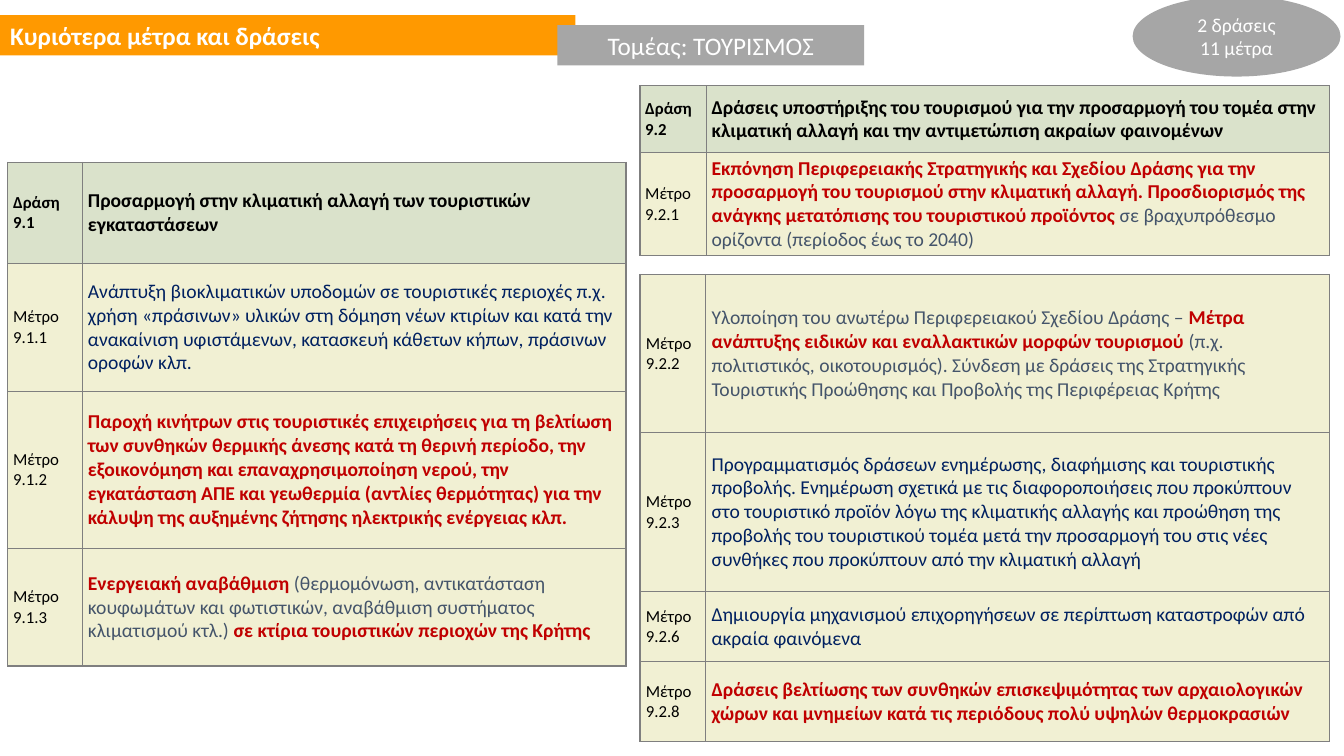
from lxml.etree import fromstring
from pptx import Presentation
from pptx.dml.color import RGBColor
from pptx.enum.shapes import MSO_SHAPE
from pptx.enum.text import MSO_ANCHOR, MSO_AUTO_SIZE, PP_ALIGN
from pptx.util import Pt

GREEN, CREAM, GREY, WHITE = "DAE2CB", "F1F0D3", "A6A6A6", "FFFFFF"
BLACK, RED, NAVY, SLATE = "000000", "C00000", "002060", "44546A"
EDGE = "7F7F7F"
NS = "http://schemas.openxmlformats.org/drawingml/2006/main"


def paint(fill, tone):
    fill.solid()
    fill.fore_color.rgb = RGBColor.from_string(tone)


def write(para, text, size=14, tone=BLACK, bold=False, align=PP_ALIGN.LEFT):
    para.alignment = align
    run = para.add_run()
    run.text = text
    run.font.name = "Calibri"
    run.font.size = Pt(size)
    run.font.bold = bold
    paint(run.font.fill, tone)


deck = Presentation()
deck.slide_width, deck.slide_height = Pt(960), Pt(540)
slide = deck.slides.add_slide(deck.slide_layouts[5])

# Header band
title = slide.shapes.title
title.left, title.top, title.width, title.height = Pt(0), Pt(10.8), Pt(411), Pt(28.8)
paint(title.fill, "FF9900")
title.text_frame.auto_size = MSO_AUTO_SIZE.NONE
title.text_frame.vertical_anchor = MSO_ANCHOR.MIDDLE
write(title.text_frame.paragraphs[0], "Κυριότερα μέτρα και δράσεις",
      size=18, tone=WHITE, bold=True)

badges = [
    (MSO_SHAPE.RECTANGLE, (398.2, 18, 219, 28.8), 18, ["Τομέας: ΤΟΥΡΙΣΜΟΣ"]),
    (MSO_SHAPE.OVAL, (809, -2.9, 148.5, 57.6), 14, ["2 δράσεις", "11 μέτρα"]),
]
for kind, box, size, lines in badges:
    badge = slide.shapes.add_shape(kind, *map(Pt, box))
    badge.shadow.inherit = False
    paint(badge.fill, GREY)
    badge.line.fill.background()
    frame = badge.text_frame
    frame.word_wrap = True
    frame.vertical_anchor = MSO_ANCHOR.MIDDLE
    for i, line in enumerate(lines):
        para = frame.add_paragraph() if i else frame.paragraphs[0]
        write(para, line, size=size, tone=WHITE, align=PP_ALIGN.CENTER)

# Each grid: left, top, column widths, side inset, rows of (height, label, runs)
grids = [
    (5.6, 116.1, (53.4, 388.2), 3.8, [
        (72, "Δράση 9.1", [
            (BLACK, "Προσαρμογή στην κλιματική αλλαγή των τουριστικών εγκαταστάσεων")]),
        (91.5, "Μέτρο 9.1.1", [
            (NAVY, "Ανάπτυξη βιοκλιματικών υποδομών σε τουριστικές περιοχές π.χ. "
                   "χρήση «πράσινων» υλικών στη δόμηση νέων κτιρίων και κατά την "
                   "ανακαίνιση υφιστάμενων, κατασκευή κάθετων κήπων, πράσινων "
                   "οροφών κλπ.")]),
        (112.2, "Μέτρο 9.1.2", [
            (RED, "Παροχή κινήτρων στις τουριστικές επιχειρήσεις για τη βελτίωση "
                  "των συνθηκών θερμικής άνεσης κατά τη θερινή περίοδο, την "
                  "εξοικονόμηση και επαναχρησιμοποίηση νερού, την "
                  "εγκατάσταση ΑΠΕ και γεωθερμία (αντλίες θερμότητας) για την "
                  "κάλυψη της αυξημένης ζήτησης ηλεκτρικής ενέργειας κλπ.")]),
        (84, "Μέτρο 9.1.3", [
            (RED, "Ενεργειακή αναβάθμιση "),
            (SLATE, "(θερμομόνωση, αντικατάσταση κουφωμάτων και φωτιστικών, "
                    "αναβάθμιση συστήματος κλιματισμού κτλ.)"),
            (RED, " σε κτίρια τουριστικών περιοχών της Κρήτης")]),
    ]),
    (457.1, 61.2, (47.4, 445), 3.8, [
        (48, "Δράση 9.2", [
            (BLACK, "Δράσεις υποστήριξης του τουρισμού για την προσαρμογή του τομέα "
                    "στην κλιματική αλλαγή και την αντιμετώπιση ακραίων φαινομένων")]),
        (73.2, "Μέτρο 9.2.1", [
            (RED, "Εκπόνηση Περιφερειακής Στρατηγικής και Σχεδίου Δράσης για την "
                  "προσαρμογή του τουρισμού στην κλιματική αλλαγή. Προσδιορισμός της "
                  "ανάγκης μετατόπισης του τουριστικού προϊόντος "),
            (SLATE, "σε βραχυπρόθεσμο ορίζοντα (περίοδος έως το 2040)")]),
    ]),
    (457.1, 196, (47, 445.4), 4.2, [
        (113.2, "Μέτρο 9.2.2", [
            (SLATE, "Υλοποίηση του ανωτέρω Περιφερειακού Σχεδίου Δράσης – "),
            (RED, "Μέτρα ανάπτυξης ειδικών και εναλλακτικών μορφών τουρισμού "),
            (SLATE, "(π.χ. πολιτιστικός, οικοτουρισμός). Σύνδεση με δράσεις της "
                    "Στρατηγικής Τουριστικής Προώθησης και Προβολής της "
                    "Περιφέρειας Κρήτης")]),
        (113.2, "Μέτρο 9.2.3", [
            (NAVY, "Προγραμματισμός δράσεων ενημέρωσης, διαφήμισης και τουριστικής "
                   "προβολής. Ενημέρωση σχετικά με τις διαφοροποιήσεις που προκύπτουν "
                   "στο τουριστικό προϊόν λόγω της κλιματικής αλλαγής και προώθηση της "
                   "προβολής του τουριστικού τομέα μετά την προσαρμογή του στις νέες "
                   "συνθήκες που προκύπτουν από την κλιματική αλλαγή")]),
        (50.4, "Μέτρο 9.2.6", [
            (NAVY, "Δημιουργία μηχανισμού επιχορηγήσεων σε περίπτωση καταστροφών "
                   "από ακραία φαινόμενα")]),
        (56.8, "Μέτρο 9.2.8", [
            (RED, "Δράσεις βελτίωσης των συνθηκών επισκεψιμότητας των αρχαιολογικών "
                  "χώρων και μνημείων κατά τις περιόδους πολύ υψηλών θερμοκρασιών")]),
    ]),
]

for left, top, widths, inset, rows in grids:
    high = sum(row[0] for row in rows)
    table = slide.shapes.add_table(len(rows), 2, Pt(left), Pt(top),
                                   Pt(sum(widths)), Pt(high)).table
    table.first_row = table.horz_banding = False
    for col, width in zip(table.columns, widths):
        col.width = Pt(width)
    for row, (height, label, runs) in zip(table.rows, rows):
        row.height = Pt(height)
        head = label.startswith("Δράση")
        for cell in row.cells:
            cell.vertical_anchor = MSO_ANCHOR.MIDDLE
            cell.margin_left = cell.margin_right = Pt(inset)
            cell.margin_top = cell.margin_bottom = 0
            paint(cell.fill, GREEN if head else CREAM)
            props = cell._tc.get_or_add_tcPr()
            for i, side in enumerate("LRTB"):
                props.insert(i, fromstring(
                    f'<a:ln{side} xmlns:a="{NS}" w="{Pt(1)}"><a:solidFill>'
                    f'<a:srgbClr val="{EDGE}"/></a:solidFill></a:ln{side}>'))
        name, body = [cell.text_frame.paragraphs[0] for cell in row.cells]
        write(name, label, size=12, bold=head)
        for tone, text in runs:
            write(body, text, tone=tone, bold=tone in (BLACK, RED))

deck.save("out.pptx")
